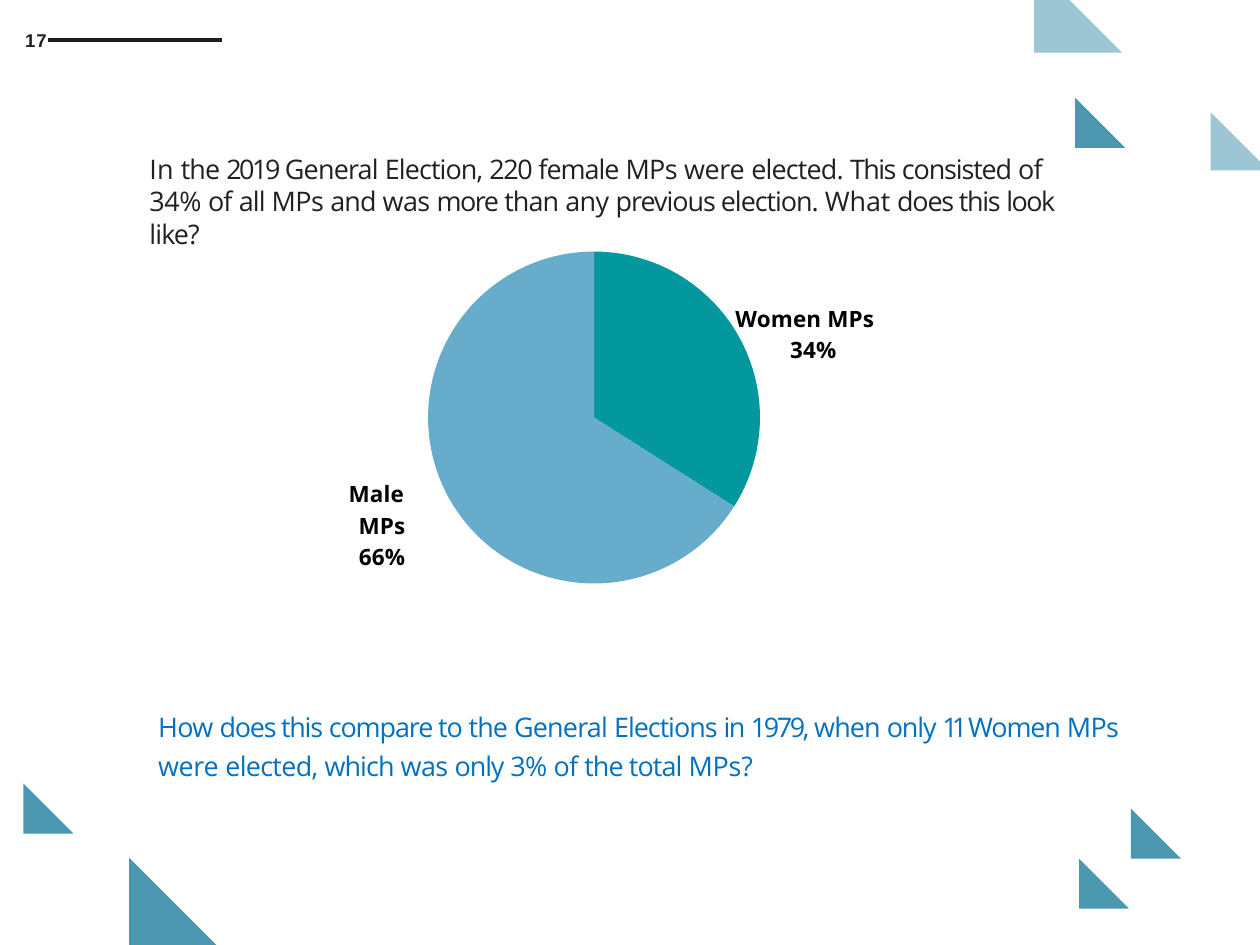
import pptx
import pptx.chart.data
import pptx.dml.color
import pptx.enum.chart
import pptx.enum.shapes
import pptx.enum.text
import pptx.oxml.ns
import pptx.oxml.xmlchemy
import pptx.util

Inches = pptx.util.Inches
Pt = pptx.util.Pt
qn = pptx.oxml.ns.qn

COLORS = {
    "triangle": "4B97B0",
    "rule": "1D1D1D",
    "body": "212121",
    "question": "0070C0",
    "label": "000000",
    "women": "03989D",
    "men": "67ACCA",
}
NUMBER = {"name": "Arial", "size": Pt(16.5), "bold": True}
BODY = {"name": "Open Sans", "size": Pt(24), "bold": False}
LABEL = {"name": "Open Sans", "size": Pt(20), "bold": True}

# Each run is its text and its letter spacing in points.
INTRO = [
    ("In ", 0.1), ("the ", -0.8), ("2019 ", -2.2), ("General ", -0.7),
    ("Election, ", -0.8), ("220 ", -1.2), ("female ", -0.9), ("MPs ", -0.5),
    ("were ", -0.3), ("elected. ", -0.7), ("This ", -1.4), ("consisted ", -1),
    ("of ", -0.7), ("34% ", -0.4), ("of ", -0.7), ("all ", -0.8),
    ("MPs ", -0.5), ("and ", -0.8), ("was ", -0.5), ("more ", -1.4),
    ("than ", -0.8), ("any ", -0.5), ("previous election. ", -0.9),
    ("What ", -0.1), ("does this ", -1.1), ("look ", -1.4), ("like?", -0.8),
]
QUESTION = [
    ("How ", -0.6), ("does this ", -1.1), ("compare to ", -1), ("the ", -0.8),
    ("General ", -0.7), ("Elections ", -0.9), ("in ", -1.4), ("1979, ", -2.1),
    ("when ", -0.8), ("only ", -1), ("11 ", -5.4), ("Women ", -1),
    ("MPs ", -0.5), ("were ", -0.3), ("elected, ", -0.6), ("which ", -0.8),
    ("was ", -0.5), ("only ", -1), ("3% ", -0.6), ("of ", -0.7),
    ("the total ", -0.8), ("MPs?", -0.2),
]

TRIANGLES = [  # left, top, side
    (1.6, 10.62, 1.08),
    (13.31, 1.21, 0.62),
    (14, 10.01, 0.62),
    (0.29, 9.7, 0.62),
    (13.36, 10.63, 0.62),
]
CUT_TRIANGLES = [  # corners of the pale triangles that meet the slide edge
    [(12.8, 0), (13.24, 0), (13.89, 0.65), (12.8, 0.65)],
    [(14.99, 1.39), (15.6, 2), (15.6, 2.11), (14.99, 2.11)],
]


def rgb(name):
    return pptx.dml.color.RGBColor.from_string(COLORS[name])


def add_element(parent, tag, val=None):
    el = pptx.oxml.xmlchemy.OxmlElement(tag)
    if val is not None:
        el.set("val", str(val))
    parent.append(el)
    return el


def paint(sp, color, opacity=None):
    """Give a shape a flat fill, with opacity in percent."""
    sp.shadow.inherit = False
    sp.line.fill.background()
    sp.fill.solid()
    sp.fill.fore_color.rgb = rgb(color)
    if opacity is not None:
        clr = sp._element.spPr.find(qn("a:solidFill")).find(qn("a:srgbClr"))
        add_element(clr, "a:alpha", opacity * 1000)


def add_triangle(s, left, top, side):
    sp = s.shapes.add_shape(
        pptx.enum.shapes.MSO_SHAPE.RIGHT_TRIANGLE,
        Inches(left), Inches(top), Inches(side), Inches(side))
    paint(sp, "triangle")


def add_cut_triangle(s, corners):
    points = [(Inches(x), Inches(y)) for x, y in corners]
    builder = s.shapes.build_freeform(*points[0])
    builder.add_line_segments(points[1:], close=True)
    paint(builder.convert_to_shape(), "triangle", opacity=54)


def add_rule(s, x1, x2, y):
    line = s.shapes.add_connector(
        pptx.enum.shapes.MSO_CONNECTOR.STRAIGHT,
        Inches(x1), Inches(y), Inches(x2), Inches(y))
    line.line.color.rgb = rgb("rule")
    line.line.width = Pt(3.6)
    add_element(line._element.spPr, "a:effectLst")


def add_text(s, box, runs, font, color, indent, paragraph=None, inset=(0, 0.01)):
    """Add one paragraph; indent is left margin and first line, in inches."""
    tb = s.shapes.add_textbox(*map(Inches, box))
    tf = tb.text_frame
    side, top = inset
    frame = {
        "word_wrap": True,
        "auto_size": pptx.enum.text.MSO_AUTO_SIZE.SHAPE_TO_FIT_TEXT,
        "margin_left": Inches(side),
        "margin_right": Inches(side),
        "margin_top": Inches(top),
        "margin_bottom": Inches(side / 2),
    }
    for key, value in frame.items():
        setattr(tf, key, value)
    p = tf.paragraphs[0]
    for key, value in {"space_before": Pt(1), **(paragraph or {})}.items():
        setattr(p, key, value)
    pPr = p._p.get_or_add_pPr()
    for key, value in zip(("marL", "indent"), indent):
        pPr.set(key, str(Inches(value)))
    for text, spacing in runs:
        for i, part in enumerate(text.split("\n")):
            if i:
                p.add_line_break()
            r = p.add_run()
            r.text = part
            for key, value in font.items():
                setattr(r.font, key, value)
            r.font.color.rgb = rgb(color)
            r._r.get_or_add_rPr().set("spc", str(round(spacing * 100)))


def fill_plot_area(chart):
    """Stretch the plot over the whole chart frame."""
    plot_area = chart._chartSpace.chart.plotArea
    for old in plot_area.findall(qn("c:layout")):
        plot_area.remove(old)
    layout = pptx.oxml.xmlchemy.OxmlElement("c:layout")
    manual = add_element(layout, "c:manualLayout")
    values = {"layoutTarget": "inner", "xMode": "edge", "yMode": "edge",
              "x": 0, "y": 0, "w": 1, "h": 1}
    for tag, value in values.items():
        add_element(manual, "c:" + tag, value)
    plot_area.insert(0, layout)


def add_pie(s, box, slices):
    data = pptx.chart.data.CategoryChartData()
    data.categories = [name for name, _, _ in slices]
    data.add_series("Share of MPs (%)", [value for _, value, _ in slices])
    chart = s.shapes.add_chart(
        pptx.enum.chart.XL_CHART_TYPE.PIE, *map(Inches, box), data).chart
    chart.has_legend = False
    chart.has_title = False
    for key, value in LABEL.items():
        setattr(chart.font, key, value)
    chart.font.color.rgb = rgb("label")
    for i, (_, _, color) in enumerate(slices):
        fmt = chart.plots[0].series[0].points[i].format
        fmt.fill.solid()
        fmt.fill.fore_color.rgb = rgb(color)
        fmt.line.fill.background()
    fill_plot_area(chart)


def main():
    prs = pptx.Presentation()
    prs.slide_width, prs.slide_height = Inches(15.6), Inches(11.7)
    s = prs.slides.add_slide(prs.slide_layouts[6])

    for triangle in TRIANGLES:
        add_triangle(s, *triangle)
    for corners in CUT_TRIANGLES:
        add_cut_triangle(s, corners)
    add_rule(s, 0.6, 2.75, 0.5)
    add_pie(s, (5.3, 3.09, 4.11, 4.16),
            [("Women MPs", 34, "women"), ("Male MPs", 66, "men")])

    add_text(s, (0.3, 0.35, 0.32, 0.29), [("17", 1.1)], NUMBER, "body", (0.01, 0))
    add_text(s, (1.6, 1.88, 11.79, 1.24), INTRO, BODY, "body", (0.25, 0))
    add_text(s, (1.85, 8.67, 12.36, 1.47), QUESTION, BODY, "question", (0.01, 0),
             {"line_spacing": 1.2}, inset=(0.1, 0.05))
    centred = {"alignment": pptx.enum.text.PP_ALIGN.CENTER, "line_spacing": 1.17}
    add_text(s, (4.02, 5.88, 1.27, 0.77), [("Male\nMPs\n66%", 0.1)], LABEL,
             "label", (0.15, -0.14), centred)
    add_text(s, (9.04, 3.71, 1.83, 0.77), [("Women MPs\n34%", 0.1)], LABEL,
             "label", (0.23, -0.21), centred)
    prs.save("out.pptx")


if __name__ == "__main__":
    main()
